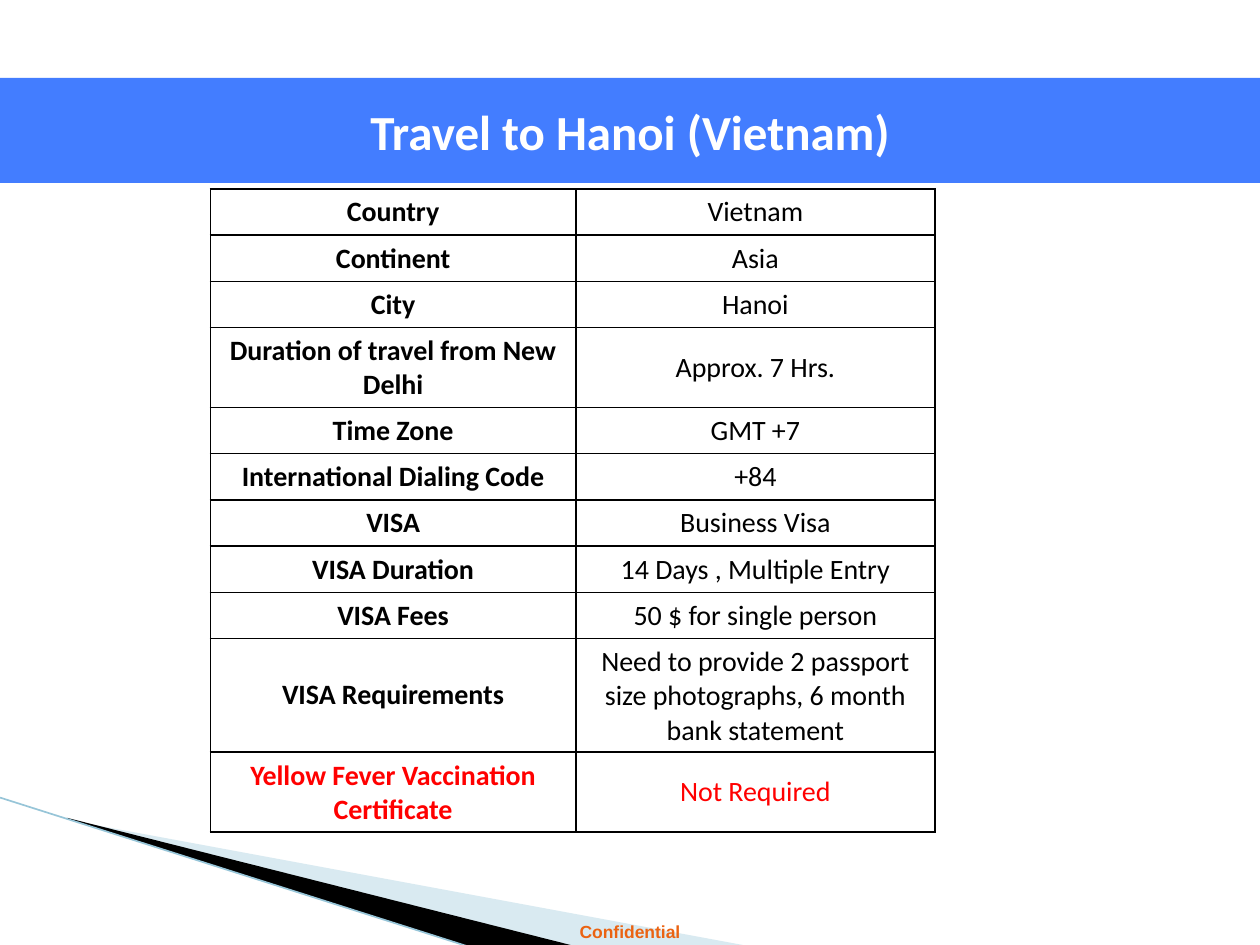
from lxml import etree
from pptx import Presentation
from pptx.dml.color import RGBColor
from pptx.enum.shapes import MSO_CONNECTOR
from pptx.enum.text import MSO_ANCHOR, MSO_AUTO_SIZE, PP_ALIGN
from pptx.oxml.ns import qn
from pptx.util import Inches, Pt

STRAIGHT = MSO_CONNECTOR.STRAIGHT
MIDDLE = MSO_ANCHOR.MIDDLE
CENTER = PP_ALIGN.CENTER
GROW = MSO_AUTO_SIZE.SHAPE_TO_FIT_TEXT

WHITE = RGBColor(0xFF, 0xFF, 0xFF)
BLACK = RGBColor(0x00, 0x00, 0x00)
RED = RGBColor(0xFF, 0x00, 0x00)
ORANGE = RGBColor(0xEB, 0x63, 0x12)
BANNER_BLUE = RGBColor(0x43, 0x7D, 0xFF)
PALE_BLUE = RGBColor(0xA0, 0xCB, 0xDC)
EDGE_BLUE = RGBColor(0x97, 0xC5, 0xD8)

TITLE_ONLY = 5
ROW_HEIGHT = 0.27
TALL_ROW_HEIGHT = 0.35
TALL_ROWS = ("VISA", "VISA Requirements")
WARNING_ROW = "Yellow Fever Vaccination Certificate"
TRAVEL_FACTS = [
    ("Country", "Vietnam"),
    ("Continent", "Asia"),
    ("City", "Hanoi"),
    ("Duration of travel from New Delhi", "Approx. 7 Hrs."),
    ("Time Zone", "GMT +7"),
    ("International Dialing Code", "+84"),
    ("VISA", "Business Visa"),
    ("VISA Duration", "14 Days , Multiple Entry"),
    ("VISA Fees", "50 $ for single person"),
    ("VISA Requirements",
     "Need to provide 2 passport size photographs, 6 month bank statement"),
    (WARNING_ROW, "Not Required"),
]


def write_centered(frame, text, font_name, size, color, bold=True):
    """Write one centred run into a text frame."""
    para = frame.paragraphs[0]
    para.alignment = CENTER
    span = para.add_run()
    span.text = text
    span.font.name = font_name
    span.font.size = Pt(size)
    span.font.bold = bold
    span.font.color.rgb = color


def add_wedge(page, points, color, opacity=100):
    """Draw a filled, unlined polygon through points in inches."""
    corners = [(Inches(x), Inches(y)) for x, y in points]
    builder = page.shapes.build_freeform(*corners[0])
    builder.add_line_segments(corners[1:], close=True)
    wedge = builder.convert_to_shape()
    wedge.shadow.inherit = False
    wedge.line.fill.background()
    wedge.fill.solid()
    wedge.fill.fore_color.rgb = color
    if opacity < 100:
        tint = wedge.fill._xPr.find(".//" + qn("a:srgbClr"))
        etree.SubElement(tint, qn("a:alpha"), val=str(opacity * 1000))


def add_corner_sweep(page, left, top, width, height):
    """Place the layered wedges and edge line in the bottom left corner."""
    bottom = top + height
    start = left + 0.55
    add_wedge(page, [(start, 6.51), (left + width, bottom),
                     (left + 4.56, bottom), (start, 6.5)], PALE_BLUE, 40)
    add_wedge(page, [(left + 0.53, 6.49), (left + 4.57, bottom),
                     (left + 3.72, bottom), (left + 0.54, 6.5)], BLACK)
    edge = page.shapes.add_connector(STRAIGHT, Inches(left), Inches(top),
                                     Inches(left + 3.71), Inches(bottom))
    edge.line.color.rgb = EDGE_BLUE
    edge.line.width = Pt(0.95)
    etree.SubElement(edge.line._get_or_add_ln().getparent(), qn("a:effectLst"))


def add_footer(page, left, top, width, height):
    """Place the confidentiality note."""
    box = page.shapes.add_textbox(Inches(left), Inches(top), Inches(width), Inches(height))
    frame = box.text_frame
    frame.word_wrap = True
    frame.auto_size = GROW
    write_centered(frame, "Confidential", "Arial", 10, ORANGE)


def place_title(page, left, top, width, height):
    """Turn the title placeholder into the full-width banner."""
    banner = page.shapes.title
    banner.left, banner.top = Inches(left), Inches(top)
    banner.width, banner.height = Inches(width), Inches(height)
    banner.fill.solid()
    banner.fill.fore_color.rgb = BANNER_BLUE
    frame = banner.text_frame
    frame.word_wrap = True
    frame.auto_size = GROW
    frame.vertical_anchor = MIDDLE
    write_centered(frame, "Travel to Hanoi (Vietnam)", "Calibri", 28, WHITE)


def set_borders(cell):
    """Give a cell a thin black line on every side."""
    properties = cell._tc.get_or_add_tcPr()
    for index, side in enumerate(("lnL", "lnR", "lnT", "lnB")):
        border = etree.Element(qn("a:" + side), w=str(Pt(1)))
        fill = etree.SubElement(border, qn("a:solidFill"))
        etree.SubElement(fill, qn("a:srgbClr"), val=str(BLACK))
        properties.insert(index, border)


def add_facts_table(page, left, top, width, height):
    """Place the two-column table of travel facts."""
    holder = page.shapes.add_table(len(TRAVEL_FACTS), 2, Inches(left), Inches(top),
                                   Inches(width), Inches(height))
    table = holder.table
    table.first_row = False
    table.horz_banding = False
    label_width = 2.9
    table.columns[0].width = Inches(label_width)
    table.columns[1].width = Inches(width - label_width)
    for row, facts in zip(table.rows, TRAVEL_FACTS):
        label = facts[0]
        row.height = Inches(TALL_ROW_HEIGHT if label in TALL_ROWS else ROW_HEIGHT)
        color = RED if label == WARNING_ROW else BLACK
        for column, (cell, text) in enumerate(zip(row.cells, facts)):
            cell.fill.background()
            cell.vertical_anchor = MIDDLE
            set_borders(cell)
            write_centered(cell.text_frame, text, "Calibri", 16, color, bold=column == 0)


def main():
    """Build and save the travel slide."""
    deck = Presentation()
    deck.slide_width, deck.slide_height = Inches(10), Inches(7.5)
    page = deck.slides.add_slide(deck.slide_layouts[TITLE_ONLY])
    add_corner_sweep(page, 0, 6.33, 5.95, 1.18)
    add_footer(page, 0, 7.26, 10, 0.27)
    place_title(page, 0, 0.75, 10, 0.57)
    add_facts_table(page, 1.67, 1.5, 5.75, 5.1)
    deck.save("out.pptx")


if __name__ == "__main__":
    main()
